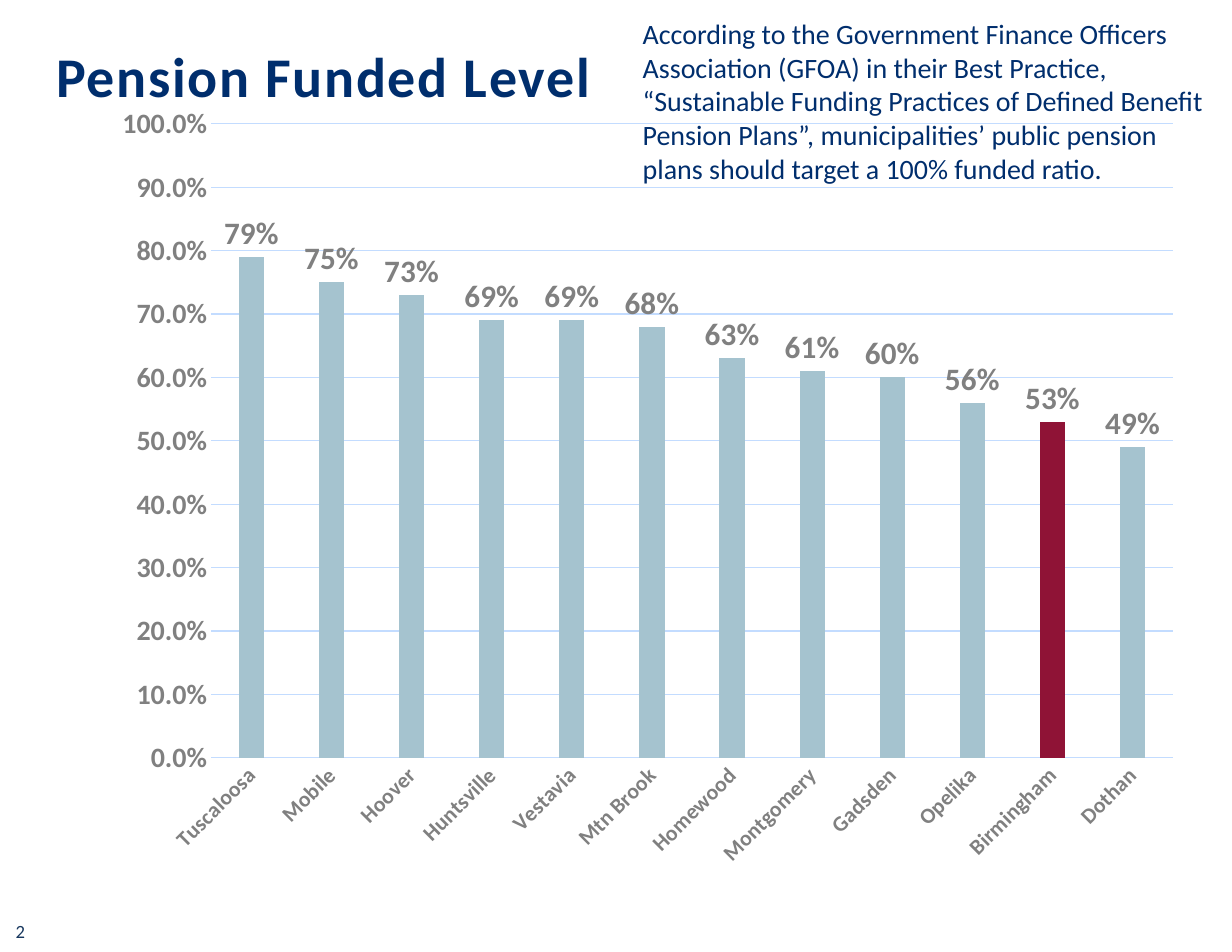
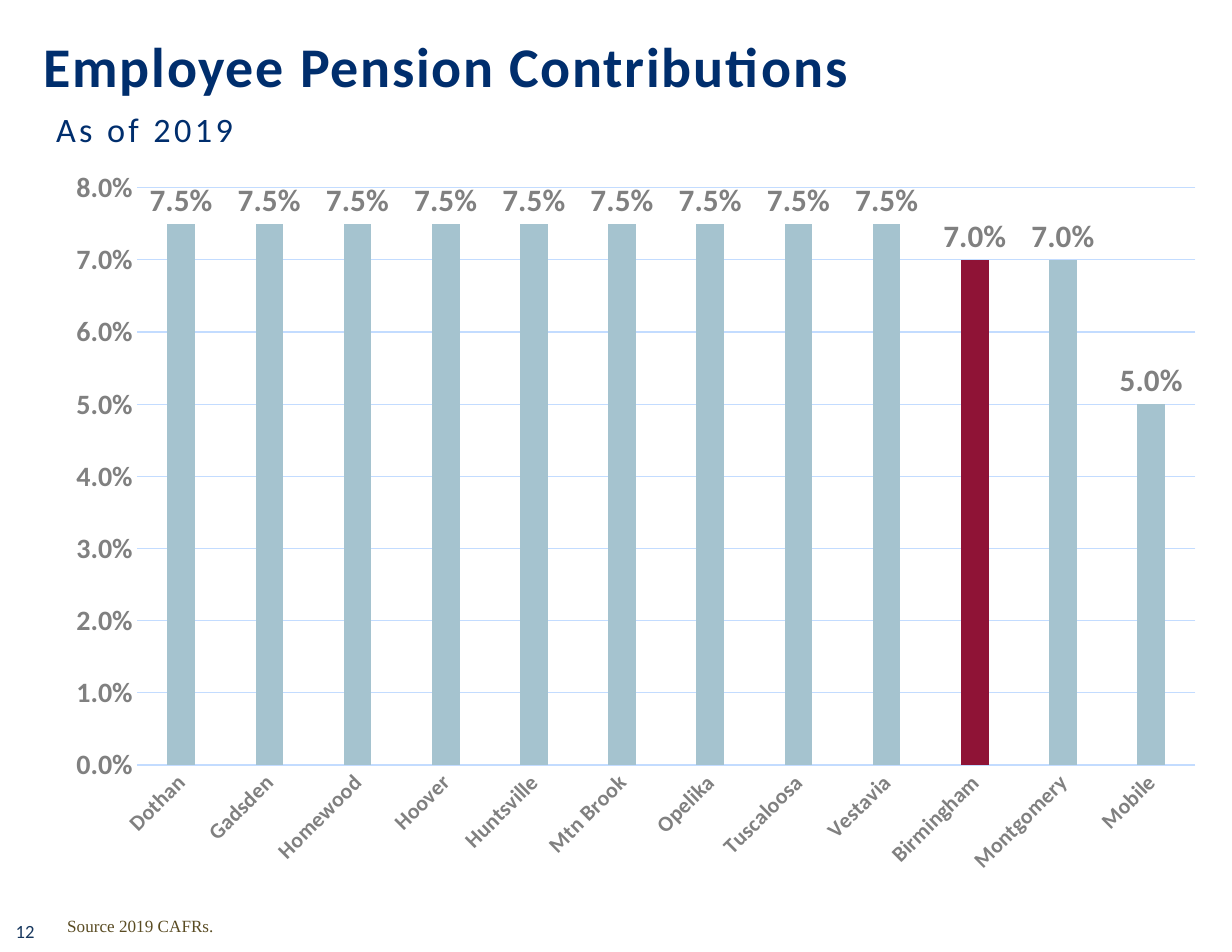
from dataclasses import dataclass

from pptx import Presentation
from pptx.chart.data import CategoryChartData
from pptx.dml.color import RGBColor
from pptx.enum.chart import XL_CHART_TYPE, XL_LABEL_POSITION, XL_TICK_MARK
from pptx.enum.text import MSO_ANCHOR, MSO_AUTO_SIZE, PP_ALIGN
from pptx.oxml import parse_xml
from pptx.oxml.ns import nsdecls
from pptx.util import Inches, Pt

COLUMNS = XL_CHART_TYPE.COLUMN_CLUSTERED
OUTSIDE_END = XL_LABEL_POSITION.OUTSIDE_END
NO_TICK = XL_TICK_MARK.NONE
TOP, MIDDLE, BOTTOM = MSO_ANCHOR.TOP, MSO_ANCHOR.MIDDLE, MSO_ANCHOR.BOTTOM
NO_AUTOFIT = MSO_AUTO_SIZE.NONE
LEFT = PP_ALIGN.LEFT
TITLE_ONLY, TITLE_AND_TWO_BODIES = 5, 3


@dataclass(frozen=True)
class Theme:
    navy: str = "002E6D"
    page_number: str = "17375E"
    source: str = "5A4C23"
    label: str = "808080"
    grid: str = "C3DCFF"
    bar: str = "A5C3CF"
    highlight: str = "8F1336"
    font: str = "Calibri"
    source_font: str = "Times New Roman"
    title_size: int = 36
    subtitle_size: int = 22
    text_size: int = 18
    number_size: int = 12
    source_size: int = 11
    category_size: int = 14
    value_size: int = 18
    data_label_size: int = 20


THEME = Theme()
HIGHLIGHTED_CITY = "Birmingham"

FUNDED_LEVEL = {
    "title": "Pension Funded Level",
    "title_at": (0.5, 0.43, 9.99, 0.48),
    "number": "2",
    "cities": [
        ("Tuscaloosa", 0.79), ("Mobile", 0.75), ("Hoover", 0.73),
        ("Huntsville", 0.69), ("Vestavia", 0.69), ("Mtn Brook", 0.68),
        ("Homewood", 0.63), ("Montgomery", 0.61), ("Gadsden", 0.60),
        ("Opelika", 0.56), ("Birmingham", 0.53), ("Dothan", 0.49),
    ],
    "chart_at": (0.78, 0.81, 9.72, 7.05),
    "plot_at": (0.114, 0.042, 0.883, 0.803),
    "scale": (1, 0.1),
    "label_format": "0%",
}
GUIDANCE = (
    "According to the Government Finance Officers Association (GFOA) in their "
    "Best Practice, “Sustainable Funding Practices of Defined Benefit Pension "
    "Plans”, municipalities’ public pension plans should target a 100% funded ratio."
)

CONTRIBUTIONS = {
    "title": "Employee Pension Contributions",
    "title_at": (0.39, 0.34, 9.99, 0.48),
    "number": "12",
    "cities": [
        ("Dothan", 0.075), ("Gadsden", 0.075), ("Homewood", 0.075),
        ("Hoover", 0.075), ("Huntsville", 0.075), ("Mtn Brook", 0.075),
        ("Opelika", 0.075), ("Tuscaloosa", 0.075), ("Vestavia", 0.075),
        ("Birmingham", 0.07), ("Montgomery", 0.07), ("Mobile", 0.05),
    ],
    "chart_at": (0.5, 0.91, 10.5, 7.16),
    "plot_at": (0.069, 0.107, 0.9, 0.72),
    "scale": (0.08, 0.01),
    "label_format": "0.0%",
}
SUBTITLE = "As of 2019"
SOURCE = "Source 2019 CAFRs."


def style_font(font, size, color, bold=False, name=THEME.font):
    font.name = name
    font.size = Pt(size)
    font.bold = bold
    font.color.rgb = RGBColor.from_string(color)


def write(box, text, size, color, bold=False, name=THEME.font, anchor=TOP,
          insets=(0.1, 0.05, 0.1, 0.05), wrap=True, spacing=0):
    """Fill a box with one left-aligned paragraph; spacing is in points."""
    frame = box.text_frame
    frame.auto_size = NO_AUTOFIT
    frame.word_wrap = wrap
    frame.vertical_anchor = anchor
    (frame.margin_left, frame.margin_top,
     frame.margin_right, frame.margin_bottom) = map(Inches, insets)
    para = frame.paragraphs[0]
    para.alignment = LEFT
    para.space_before = Pt(0)
    span = para.add_run()
    span.text = text
    style_font(span.font, size, color, bold, name)
    if spacing:
        span.font._element.set("spc", str(round(spacing * 100)))


def place(box, at):
    box.left, box.top, box.width, box.height = map(Inches, at)


def add_text_box(page, at, *args, **kwargs):
    write(page.shapes.add_textbox(*map(Inches, at)), *args, **kwargs)


def fill_body(page, index, at, *args, **kwargs):
    """Use a body placeholder as plain text without a bullet."""
    box = page.placeholders[index]
    place(box, at)
    write(box, *args, **kwargs)
    properties = box.text_frame.paragraphs[0]._p.get_or_add_pPr()
    properties.set("marL", "0")
    properties.set("indent", "0")
    properties.append(parse_xml(f"<a:buNone {nsdecls('a')}/>"))


def add_page(deck, layout, content):
    page = deck.slides.add_slide(deck.slide_layouts[layout])
    place(page.shapes.title, content["title_at"])
    write(page.shapes.title, content["title"], THEME.title_size, THEME.navy, bold=True,
          anchor=MIDDLE, insets=(0, 0, 0, 0), wrap=False, spacing=1.1)
    add_text_box(page, (0, 8.16, 0.53, 0.3), content["number"], THEME.number_size,
                 THEME.page_number, anchor=MIDDLE, insets=(0.14, 0.05, 0.1, 0.05))
    return page


def fix_plot_area(chart, fractions):
    """Set the inner plot area as fractions of the chart's size."""
    plot_area = chart.element.xpath("c:chart/c:plotArea")[0]
    for layout in plot_area.xpath("c:layout"):
        plot_area.remove(layout)
    sizes = "".join(f'<c:{tag} val="{value}"/>' for tag, value in zip("xywh", fractions))
    plot_area.insert(0, parse_xml(
        f'<c:layout {nsdecls("c")}><c:manualLayout><c:layoutTarget val="inner"/>'
        f'<c:xMode val="edge"/><c:yMode val="edge"/>{sizes}</c:manualLayout></c:layout>'))


def style_line(line):
    line.color.rgb = RGBColor.from_string(THEME.grid)
    line.width = Pt(0.75)


def style_axes(chart, scale):
    categories, values = chart.category_axis, chart.value_axis
    for axis, size in ((categories, THEME.category_size), (values, THEME.value_size)):
        axis.major_tick_mark = axis.minor_tick_mark = NO_TICK
        style_font(axis.tick_labels.font, size, THEME.label, bold=True)
    categories.has_major_gridlines = False
    style_line(categories.format.line)
    chart.element.xpath(".//c:catAx/c:txPr/a:bodyPr")[0].set("rot", "-2700000")

    values.minimum_scale = 0
    values.maximum_scale, values.major_unit = scale
    values.format.line.fill.background()
    values.has_major_gridlines = True
    style_line(values.major_gridlines.format.line)
    values.tick_labels.number_format = "0.0%"
    values.tick_labels.number_format_is_linked = False


def fill_bar(bar, color):
    bar.format.fill.solid()
    bar.format.fill.fore_color.rgb = RGBColor.from_string(color)


def add_city_chart(page, content):
    cities, rates = zip(*content["cities"])
    data = CategoryChartData(number_format="0.0%")
    data.categories = cities
    data.add_series("Series 1", rates)
    frame = page.shapes.add_chart(COLUMNS, *map(Inches, content["chart_at"]), data)
    chart = frame.chart
    chart.has_title = chart.has_legend = False
    style_font(chart.font, 10, THEME.navy)
    fix_plot_area(chart, content["plot_at"])
    style_axes(chart, content["scale"])

    plot = chart.plots[0]
    plot.vary_by_categories = False
    plot.gap_width, plot.overlap = 219, -27
    series = plot.series[0]
    fill_bar(series, THEME.bar)
    fill_bar(series.points[cities.index(HIGHLIGHTED_CITY)], THEME.highlight)

    labels = series.data_labels
    labels.show_value = True
    labels.position = OUTSIDE_END
    labels.number_format = content["label_format"]
    labels.number_format_is_linked = False
    style_font(labels.font, THEME.data_label_size, THEME.label, bold=True)


def main():
    deck = Presentation()
    deck.slide_width, deck.slide_height = Inches(11), Inches(8.5)

    page = add_page(deck, TITLE_ONLY, FUNDED_LEVEL)
    add_city_chart(page, FUNDED_LEVEL)
    add_text_box(page, (5.64, 0.1, 5.2, 1.62), GUIDANCE, THEME.text_size, THEME.navy)

    page = add_page(deck, TITLE_AND_TWO_BODIES, CONTRIBUTIONS)
    fill_body(page, 1, (0.5, 0.92, 9.99, 0.57), SUBTITLE, THEME.subtitle_size,
              THEME.navy, insets=(0, 0.05, 0.1, 0.05), spacing=2.2)
    fill_body(page, 2, (0.5, 7.65, 9.28, 0.76), SOURCE, THEME.source_size,
              THEME.source, name=THEME.source_font, anchor=BOTTOM)
    add_city_chart(page, CONTRIBUTIONS)

    deck.save("out.pptx")


if __name__ == "__main__":
    main()
